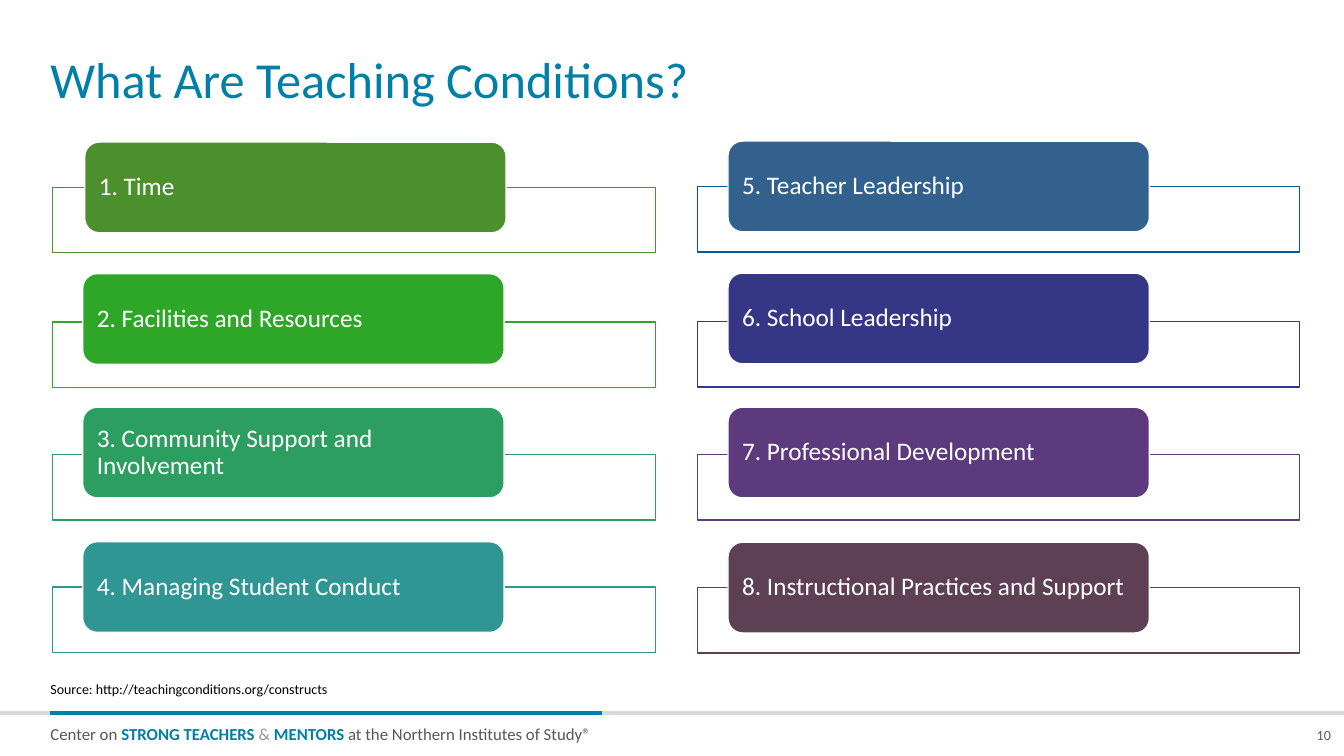
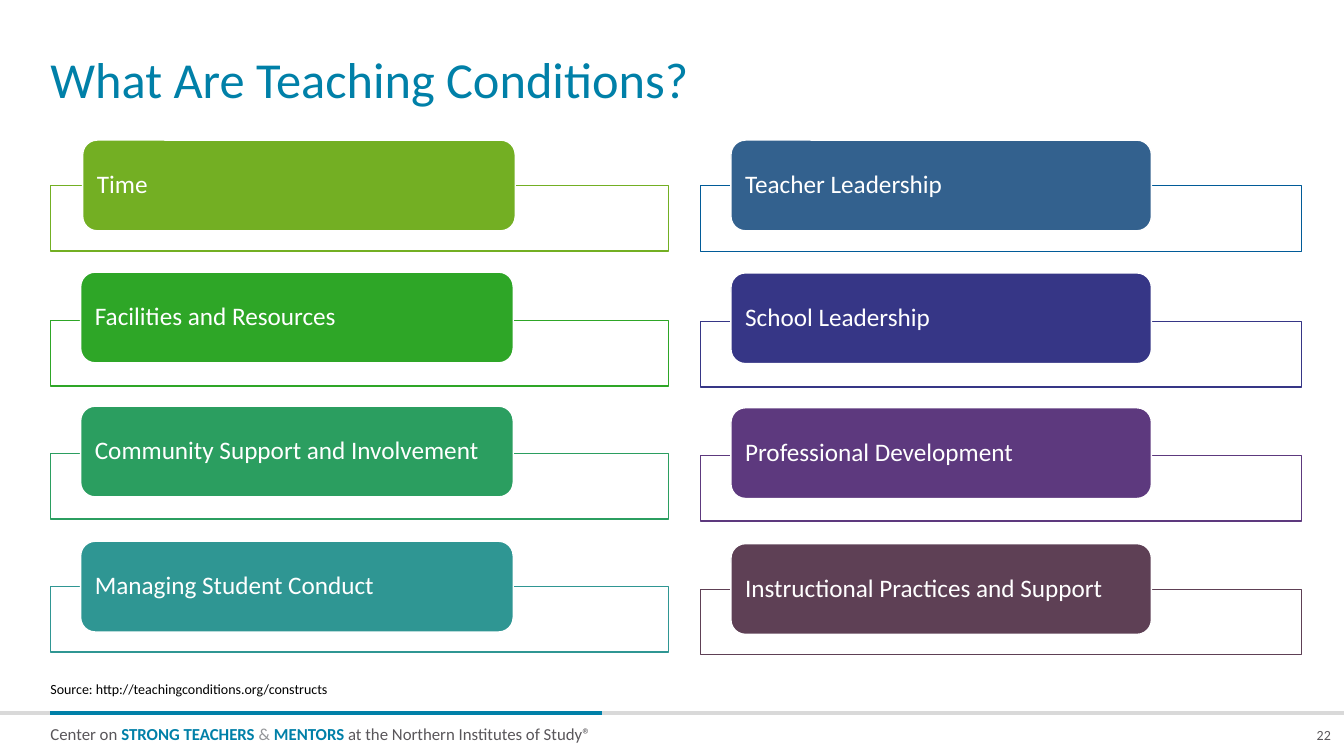
from dataclasses import dataclass

from lxml.etree import SubElement
from pptx import Presentation
from pptx.dml.color import RGBColor
from pptx.enum.shapes import MSO_CONNECTOR, MSO_SHAPE
from pptx.enum.text import MSO_ANCHOR, PP_ALIGN
from pptx.oxml.ns import qn
from pptx.util import Emu, Pt

PX = 9144
SLIDE_W, SLIDE_H = 1333, 750


@dataclass(frozen=True)
class Theme:
    font: str = "Calibri"
    white: str = "FFFFFF"
    black: str = "000000"
    brand: str = "0080A8"
    text: str = "59565A"
    soft: str = "939598"
    rule: str = "D9D9D9"
    olive: str = "4C902D"
    lime: str = "73AF23"
    green: str = "2EA627"
    jade: str = "2B9E60"
    teal: str = "2F9693"
    steel: str = "33618E"
    ocean: str = "015B98"
    navy: str = "363686"
    purple: str = "5D397E"
    plum: str = "5E4055"
    title_size: int = 36
    label_size: int = 18
    footer_size: int = 12
    small_size: int = 10
    rule_width: int = 3
    box_line: int = 1


T = Theme()

TITLE = "What Are Teaching Conditions?"
SOURCE = "Source: http://teachingconditions.org/constructs"
FOOTER = [
    ("Center on ", T.text, False),
    ("STRONG TEACHERS ", T.brand, True),
    ("& ", T.soft, False),
    ("MENTORS", T.brand, True),
    (" at the Northern Institutes of Study®", T.text, False),
]
CONDITIONS = [
    "Time",
    "Facilities and Resources",
    "Community Support and Involvement",
    "Managing Student Conduct",
    "Teacher Leadership",
    "School Leadership",
    "Professional Development",
    "Instructional Practices and Support",
]
LEFT_COLORS = [T.green, T.jade, T.teal]
RIGHT_COLORS = [T.steel, T.navy, T.purple, T.plum]
OUTLINE_COLORS = {T.steel: T.ocean}

COLUMN_H = 508
LABEL_TOPS = (0, 131, 264, 398)
OUTLINE_TOPS = (45, 179, 311, 443)
LABEL_H, OUTLINE_H = 90, 65


def px(*values):
    return [Emu(round(v * PX)) for v in values]


def rgb(color):
    return RGBColor.from_string(color)


def apply(obj, formats):
    for name, value in formats.items():
        setattr(obj, name, value)


def write(sp, runs, size, margins=(0, 0), wrap=True,
          anchor=MSO_ANCHOR.BOTTOM, align=PP_ALIGN.LEFT, spacing=1.0):
    tf = sp.text_frame
    mx, my = px(*margins)
    apply(tf, {
        "margin_left": mx, "margin_right": mx,
        "margin_top": my, "margin_bottom": my,
        "word_wrap": wrap, "vertical_anchor": anchor,
    })
    p = tf.paragraphs[0]
    apply(p, {"alignment": align, "line_spacing": spacing})
    for text, color, bold in runs:
        r = p.add_run()
        r.text = text
        apply(r.font, {"name": T.font, "size": Pt(size), "bold": bold})
        r.font.color.rgb = rgb(color)


def add_text(s, box, runs, size, **formats):
    write(s.shapes.add_textbox(*px(*box)), runs, size, **formats)


def add_box(s, kind, box, fill, line=None):
    sp = s.shapes.add_shape(kind, *px(*box))
    sp.shadow.inherit = False
    sp.fill.solid()
    sp.fill.fore_color.rgb = rgb(fill)
    if line:
        sp.line.color.rgb = rgb(line)
        sp.line.width = Pt(T.box_line)
    else:
        sp.line.fill.background()
    return sp


def add_rule(s, x1, x2, y, color):
    cn = s.shapes.add_connector(MSO_CONNECTOR.STRAIGHT, *px(x1, y, x2, y))
    cn.line.color.rgb = rgb(color)
    cn.line.width = Pt(T.rule_width)
    SubElement(cn._element.spPr, qn("a:effectLst"))


def add_footer(s, box, number):
    x, y, w, h = box
    add_box(s, MSO_SHAPE.RECTANGLE, box, T.white)
    add_text(s, (x + 50, y + 6, 700, 23), FOOTER, T.footer_size,
             anchor=MSO_ANCHOR.TOP, spacing=1.25)
    add_rule(s, x, x + w, y, T.rule)
    add_rule(s, x + 50, x + 597, y, T.brand)
    add_text(s, (x + w - 30, y + 13, 17, 17),
             [(str(number), T.text, False)], T.small_size,
             wrap=False, align=PP_ALIGN.RIGHT)


def add_heading(s, box):
    x, y, w, h = box
    add_text(s, (x, y, w, 109), [(TITLE, T.brand, False)], T.title_size,
             spacing=0.9)
    add_text(s, (x, y + h - 21, w, 21), [(SOURCE, T.black, False)],
             T.small_size)


def add_column(s, box, labels, colors, label_w, nudge=0):
    x, y, w, h = box
    scale = h / COLUMN_H
    rows = zip(labels, colors, LABEL_TOPS, OUTLINE_TOPS)
    for i, (label, color, label_top, outline_top) in enumerate(rows):
        add_box(s, MSO_SHAPE.RECTANGLE,
                (x, y + outline_top * scale, w, OUTLINE_H),
                T.white, OUTLINE_COLORS.get(color, color))
        label_x = x + 30 + (0 if i else nudge)
        sp = add_box(s, MSO_SHAPE.ROUNDED_RECTANGLE,
                     (label_x, y + label_top * scale, label_w, LABEL_H),
                     color, T.white)
        sp.adjustments[0] = 0.16
        write(sp, [(label, T.white, False)], T.label_size, margins=(10, 0),
              anchor=MSO_ANCHOR.MIDDLE, spacing=0.9)


def add_conditions_slide(prs, number, labels, first_color, left, right):
    s = prs.slides.add_slide(prs.slide_layouts[6])
    add_footer(s, (0, 707, SLIDE_W, 43), number)
    add_heading(s, (50, 0, 1240, 692))
    left_box, left_label_w = left
    right_box, right_label_w = right
    add_column(s, left_box, labels[:4], [first_color] + LEFT_COLORS,
               left_label_w, nudge=2)
    add_column(s, right_box, labels[4:], RIGHT_COLORS, right_label_w)


def main():
    prs = Presentation()
    prs.slide_width, prs.slide_height = px(SLIDE_W, SLIDE_H)
    numbered = [f"{i}. {name}" for i, name in enumerate(CONDITIONS, 1)]
    add_conditions_slide(prs, 10, numbered, T.olive,
                         ((52, 141, 598, 506), 418),
                         ((692, 140, 597, 508), 418))
    add_conditions_slide(prs, 22, CONDITIONS, T.lime,
                         ((50, 139, 613, 508), 429),
                         ((695, 139, 596, 511), 417))
    prs.save("out.pptx")


if __name__ == "__main__":
    main()
